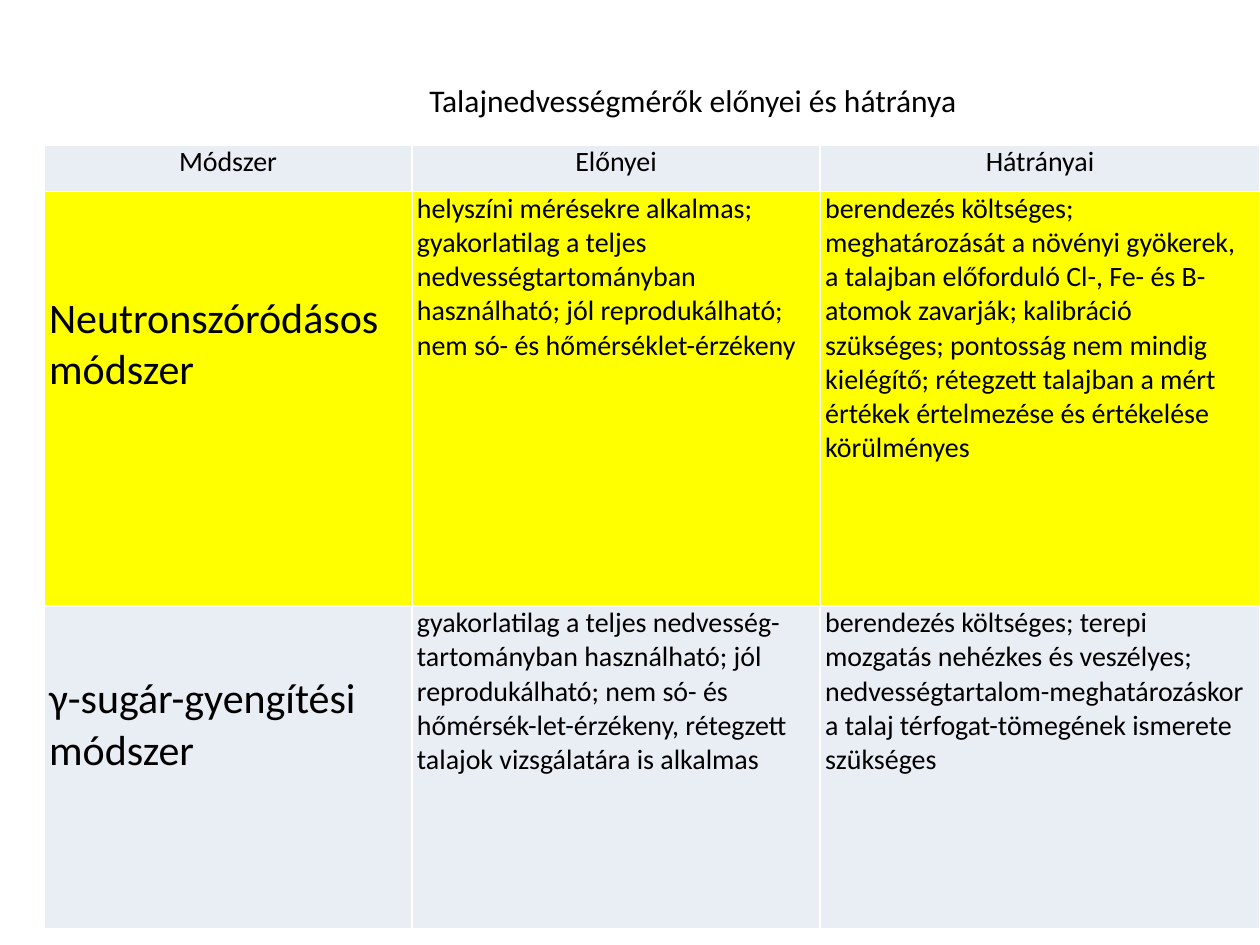
"""Build a slide comparing the advantages and drawbacks of soil moisture methods."""
from lxml import etree
from pptx import Presentation
from pptx.dml.color import RGBColor
from pptx.enum import text
from pptx.oxml import ns
from pptx.util import Inches, Pt

THEME = {
    "font": "Calibri",
    "ink": RGBColor(0, 0, 0),
    "pale": RGBColor(0xE9, 0xED, 0xF4),
    "yellow": RGBColor(0xFF, 0xFF, 0),
    "border": "FFFFFF",
    "title": Pt(18),
    "body": Pt(16),
    "method": Pt(24),
}
ALIGN = text.PP_ALIGN


def write(tf, content, size, align):
    p = tf.paragraphs[0]
    p.alignment = align
    r = p.add_run()
    r.text = content
    font = {"name": THEME["font"], "size": size, "bold": False}
    for name, value in font.items():
        setattr(r.font, name, value)
    r.font.color.rgb = THEME["ink"]


def add_borders(cell):
    tc_pr = cell._tc.get_or_add_tcPr()
    for side in ("lnL", "lnR", "lnT", "lnB"):
        ln = etree.SubElement(tc_pr, ns.qn(f"a:{side}"), w=str(Pt(1)))
        fill = etree.SubElement(ln, ns.qn("a:solidFill"))
        etree.SubElement(fill, ns.qn("a:srgbClr"), val=THEME["border"])


prs = Presentation()
prs.slide_width, prs.slide_height = Inches(10), Inches(7.5)
s = prs.slides.add_slide(prs.slide_layouts[5])

title = s.shapes.title
place = {"left": 1.25, "top": 0.67, "width": 8.5, "height": 0.25}
for name, value in place.items():
    setattr(title, name, Inches(value))
tf = title.text_frame
frame = {
    "word_wrap": True,
    "auto_size": text.MSO_AUTO_SIZE.NONE,
    "vertical_anchor": text.MSO_ANCHOR.MIDDLE,
}
for name, value in frame.items():
    setattr(tf, name, value)
write(tf, "Talajnedvességmérők előnyei és hátránya", THEME["title"], ALIGN.CENTER)

rows = [
    (0.37, "pale", 0, ("Módszer", "Előnyei", "Hátrányai")),
    (3.29, "yellow", 0.81, (
        "Neutronszóródásos módszer",
        "helyszíni mérésekre alkalmas; gyakorlatilag a teljes "
        "nedvességtartományban használható; jól reprodukálható; "
        "nem só- és hőmérséklet-érzékeny",
        "berendezés költséges; meghatározását a növényi gyökerek, a talajban "
        "előforduló Cl-, Fe- és B-atomok zavarják; kalibráció szükséges; "
        "pontosság nem mindig kielégítő; rétegzett talajban a mért értékek "
        "értelmezése és értékelése körülményes",
    )),
    (2.56, "pale", 0.54, (
        "γ-sugár-gyengítési módszer",
        "gyakorlatilag a teljes nedvesség-tartományban használható; jól "
        "reprodukálható; nem só- és hőmérsék-let-érzékeny, rétegzett talajok "
        "vizsgálatára is alkalmas",
        "berendezés költséges; terepi mozgatás nehézkes és veszélyes; "
        "nedvességtartalom-meghatározáskor a talaj térfogat-tömegének "
        "ismerete szükséges",
    )),
]
widths = (2.92, 3.24, 3.49)
height = sum(row[0] for row in rows)
table = s.shapes.add_table(
    len(rows), len(widths),
    Inches(0.35), Inches(1.15), Inches(sum(widths)), Inches(height),
).table
table.first_row = table.horz_banding = False
for column, width in zip(table.columns, widths):
    column.width = Inches(width)

for i, (row_height, color, method_top, contents) in enumerate(rows):
    table.rows[i].height = Inches(row_height)
    for j, content in enumerate(contents):
        cell = table.cell(i, j)
        is_method = i > 0 and j == 0
        margins = {
            "margin_left": 0.04,
            "margin_right": 0.04,
            "margin_top": method_top if is_method else 0,
            "margin_bottom": 0,
        }
        for name, value in margins.items():
            setattr(cell, name, Inches(value))
        cell.vertical_anchor = text.MSO_ANCHOR.TOP
        add_borders(cell)
        cell.fill.solid()
        cell.fill.fore_color.rgb = THEME[color]
        size = THEME["method" if is_method else "body"]
        write(cell.text_frame, content, size, ALIGN.LEFT if i else ALIGN.CENTER)

prs.save("out.pptx")
